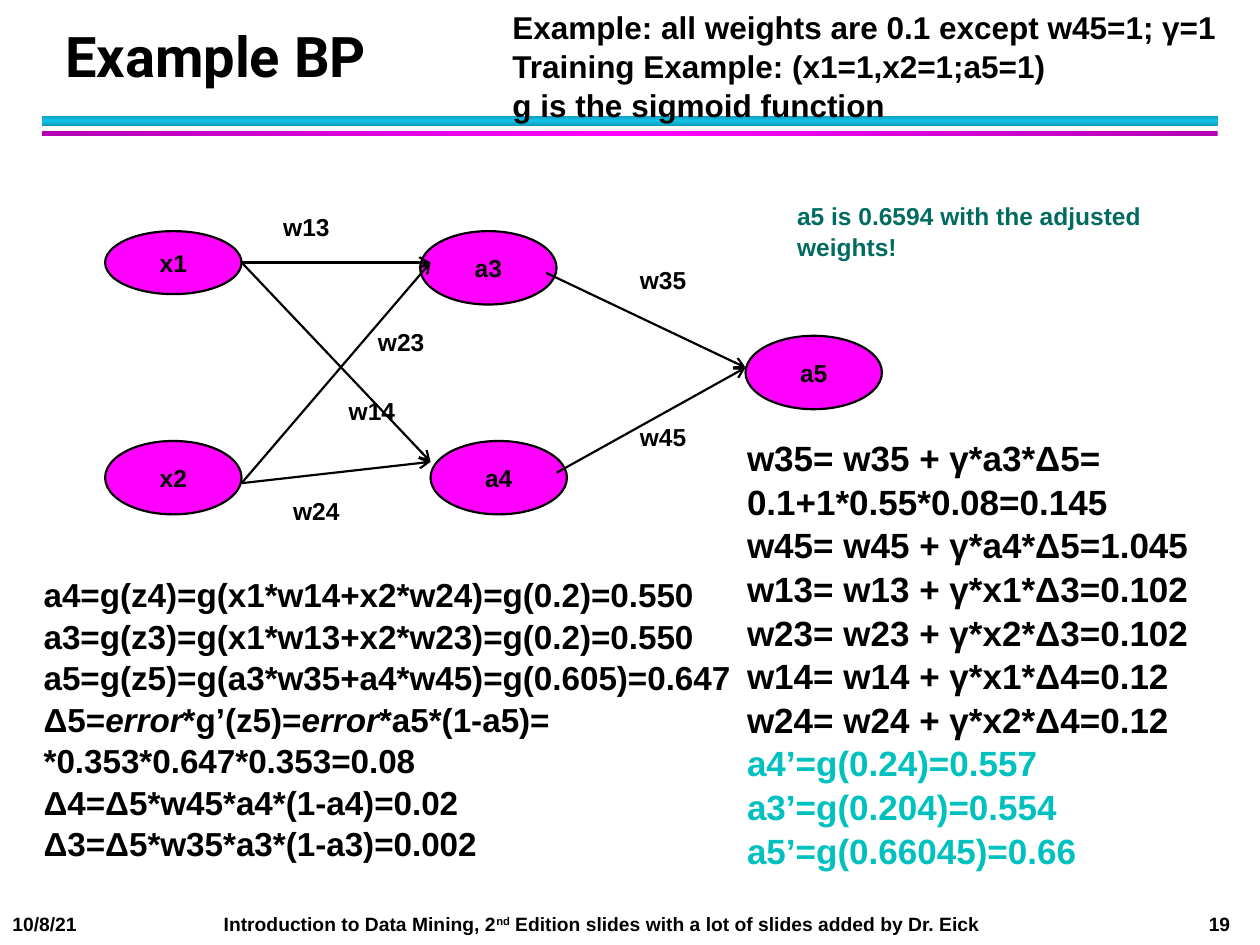
from copy import deepcopy

from lxml import etree
from pptx import Presentation
from pptx.dml.color import RGBColor
from pptx.enum.shapes import MSO_CONNECTOR, MSO_SHAPE
from pptx.enum.text import MSO_ANCHOR, MSO_AUTO_SIZE, PP_ALIGN
from pptx.oxml.ns import qn
from pptx.util import Cm, Pt

BLACK = RGBColor(0x00, 0x00, 0x00)
PINK = RGBColor(0xFF, 0x00, 0xFF)
PLUM = RGBColor(0xB2, 0x00, 0xB2)
SKY = RGBColor(0x12, 0xC2, 0xE9)
SEA = RGBColor(0x0E, 0x9B, 0xBA)
AQUA = RGBColor(0x00, 0xC0, 0xC0)
TEAL = RGBColor(0x00, 0x6B, 0x61)

OVAL, RECT = MSO_SHAPE.OVAL, MSO_SHAPE.RECTANGLE
LINE = MSO_CONNECTOR.STRAIGHT
LEFT, MID, RIGHT = PP_ALIGN.LEFT, PP_ALIGN.CENTER, PP_ALIGN.RIGHT
CENTER, BOTTOM = MSO_ANCHOR.MIDDLE, MSO_ANCHOR.BOTTOM
FIXED = MSO_AUTO_SIZE.NONE

ITALIC = {"i": "1"}
SUPER = {"baseline": "30000"}


class Deck:
    font = "Arial"
    stroke = Pt(1.25)
    lead = 1.04

    def __init__(self, wide, high):
        self.prs = Presentation()
        self.prs.slide_width, self.prs.slide_height = Cm(wide), Cm(high)
        self.slide = self.prs.slides.add_slide(self.prs.slide_layouts[5])
        self.shapes = self.slide.shapes

    def style(self, para, size, color=BLACK, align=LEFT, font=None):
        para.alignment = align
        para.font.name = font or self.font
        para.font.size = Pt(size)
        para.font.bold = True
        para.font.color.rgb = color

    def title(self, text, x, y, w, h):
        head = self.shapes.title
        head.left, head.top, head.width, head.height = map(Cm, (x, y, w, h))
        frame = head.text_frame
        frame.text = text
        frame.auto_size = FIXED
        frame.vertical_anchor = BOTTOM
        para = frame.paragraphs[0]
        self.style(para, 32, font="Roboto")
        para.line_spacing = Pt(36)

    def text(self, lines, x, y, w, h, size, color=BLACK, align=LEFT,
             mark=ITALIC):
        """Write one paragraph per line; parts between bars get the mark."""
        box = self.shapes.add_textbox(Cm(x), Cm(y), Cm(w), Cm(h))
        frame = box.text_frame
        frame.word_wrap = True
        for i, line in enumerate(lines):
            para = frame.add_paragraph() if i else frame.paragraphs[0]
            self.style(para, size, color, align)
            para.line_spacing = self.lead
            for j, part in enumerate(line.split("|")):
                run = para.add_run()
                run.text = part
                if j % 2:
                    for key, value in mark.items():
                        run.font._element.set(key, value)
        return frame

    def bar(self, y, h, edge, core, angle):
        bar = self.shapes.add_shape(RECT, Cm(0.85), Cm(y), Cm(23.7), Cm(h))
        bar.shadow.inherit = False
        bar.line.fill.background()
        bar.fill.gradient()
        bar.fill.gradient_angle = angle
        stops = bar._element.spPr.find(".//" + qn("a:gsLst"))
        stops.append(deepcopy(stops[0]))
        tones = zip(bar.fill.gradient_stops, (0, 0.5, 1), (edge, core, edge))
        for stop, place, tone in tones:
            stop.position = place
            stop.color.rgb = tone

    def node(self, name, x, y, h=1.48):
        node = self.shapes.add_shape(OVAL, Cm(x), Cm(y), Cm(2.75), Cm(h))
        node.shadow.inherit = False
        node.fill.solid()
        node.fill.fore_color.rgb = PINK
        node.line.color.rgb = BLACK
        node.line.width = self.stroke
        frame = node.text_frame
        frame.word_wrap = False
        frame.vertical_anchor = CENTER
        frame.text = name
        self.style(frame.paragraphs[0], 14, align=MID)

    def arrow(self, start, end):
        link = self.shapes.add_connector(LINE, *map(Cm, start + end))
        link.line.color.rgb = BLACK
        link.line.width = self.stroke
        tip = etree.SubElement(link.line._get_or_add_ln(), qn("a:tailEnd"))
        tip.set("type", "arrow")
        etree.SubElement(link._element.spPr, qn("a:effectLst"))


def main():
    deck = Deck(25.4, 19.05)

    # Header rules and title
    deck.bar(2.33, 0.21, SEA, SKY, 90)
    deck.bar(2.64, 0.1, PLUM, PINK, 0)
    deck.title("Example BP", 1.06, 0.43, 23, 1.48)

    # Network nodes
    deck.node("x1", 2.12, 4.66, 1.27)
    deck.node("x2", 2.12, 8.89)
    deck.node("a3", 8.47, 4.66)
    deck.node("a4", 8.68, 8.89)
    deck.node("a5", 15.03, 6.77)

    # Links between layers
    goal = (15.03, 7.41)
    for start in ((4.87, 5.29), (4.87, 9.74)):
        for end in ((8.68, 5.29), (8.68, 9.31)):
            deck.arrow(start, end)
    for start in ((11.01, 5.5), (11.22, 9.53)):
        deck.arrow(start, goal)

    # Weight labels
    for name, x, y in (("w13", 5.46, 4.12), ("w23", 7.37, 6.45),
                       ("w14", 6.78, 7.83), ("w24", 5.66, 9.86),
                       ("w45", 12.65, 8.35), ("w35", 12.65, 5.19)):
        deck.text([name], x, y, 1.6, 1.02, 14)

    # Forward pass and errors
    deck.text([
        "a4=g(z4)=g(x1*w14+x2*w24)=g(0.2)=0.550",
        "a3=g(z3)=g(x1*w13+x2*w23)=g(0.2)=0.550",
        "a5=g(z5)=g(a3*w35+a4*w45)=g(0.605)=0.647",
        "Δ5=|error|*g’(z5)=|error|*a5*(1-a5)=",
        "*0.353*0.647*0.353=0.08",
        "Δ4=Δ5*w45*a4*(1-a4)=0.02",
        "Δ3=Δ5*w35*a3*(1-a3)=0.002",
    ], 0.63, 11.43, 14.6, 6.76, 19)

    # Weight updates, then new outputs
    sums = deck.text([
        "w35= w35 + γ*a3*Δ5=",
        "0.1+1*0.55*0.08=0.145",
        "w45= w45 + γ*a4*Δ5=1.045",
        "w13= w13 + γ*x1*Δ3=0.102",
        "w23= w23 + γ*x2*Δ3=0.102",
        "w14= w14 + γ*x1*Δ4=0.12",
        "w24= w24 + γ*x2*Δ4=0.12",
        "a4’=g(0.24)=0.557",
        "a3’=g(0.204)=0.554",
        "a5’=g(0.66045)=0.66",
    ], 14.81, 8.64, 10.59, 9.65, 20)
    for para in sums.paragraphs[-3:]:
        para.font.color.rgb = AQUA

    # Setup and remark
    deck.text([
        "Example: all weights are 0.1 except w45=1; γ=1 "
        "Training Example: (x1=1,x2=1;a5=1)",
        "g is the sigmoid function",
    ], 10.08, 0, 15.44, 2.57, 18)
    deck.text(["a5 is 0.6594 with the adjusted", "weights!"],
              15.82, 3.91, 8.64, 1.78, 14, TEAL)

    # Footer
    foot = "Introduction to Data Mining, 2|nd| Edition slides " \
           "with a lot of slides added by Dr. Eick"
    deck.text(["10/8/21"], 0, 18.24, 3, 0.8, 11)
    deck.text([foot], 4.26, 18.24, 17, 0.8, 11, mark=SUPER)
    deck.text(["19"], 23, 18.24, 2.05, 0.8, 11, align=RIGHT)

    deck.prs.save("out.pptx")


if __name__ == "__main__":
    main()
